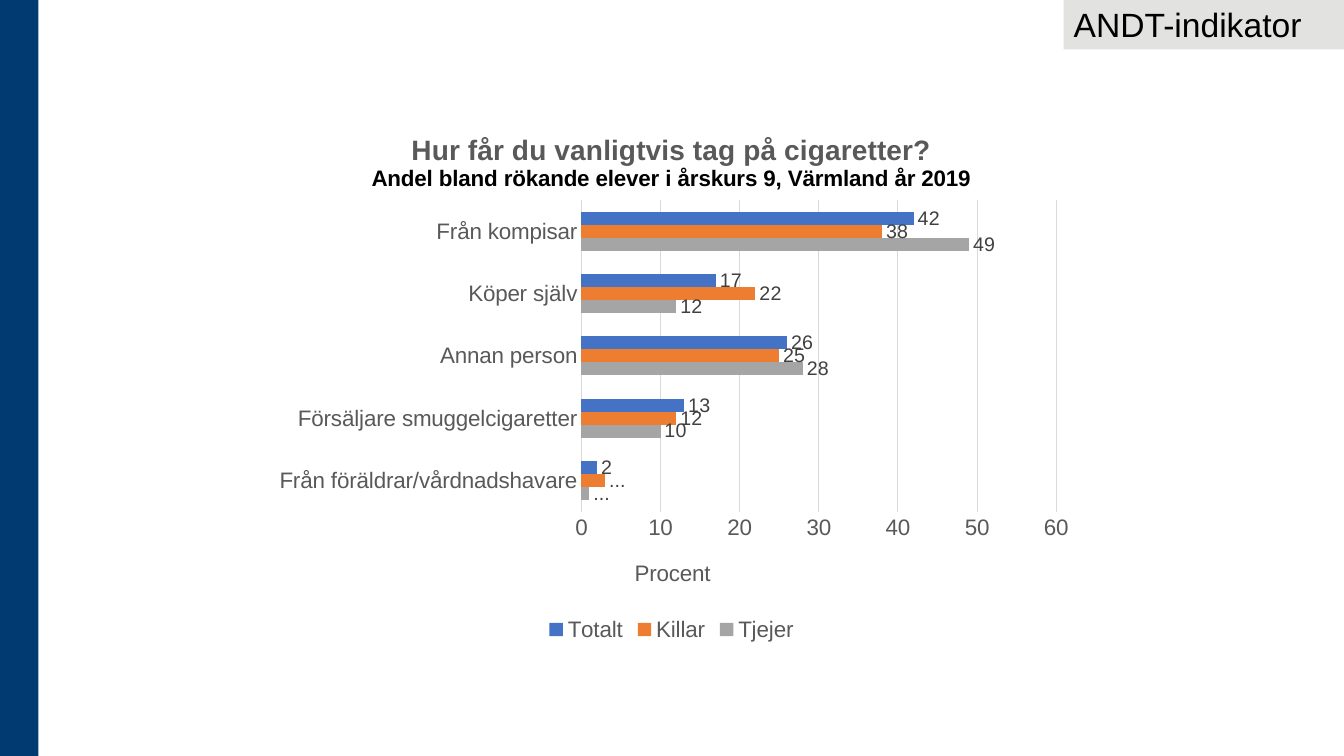
from lxml import etree
from pptx import Presentation, util as u
from pptx.chart.data import CategoryChartData
from pptx.dml.color import RGBColor
from pptx.enum import chart as ch, shapes, text
from pptx.oxml.ns import qn

COLORS = {
    "band": "003A70", "tag": "E2E2E1", "black": "000000", "axis": "595959",
    "grid": "D9D9D9", "label": "404040",
    "Tjejer": "A5A5A5", "Killar": "ED7D31", "Totalt": "4472C4",
}
FONT = "Arial"
WIDTH, HEIGHT = u.Inches(13.33), u.Inches(7.5)
SOURCES = ["Från föräldrar/vårdnadshavare", "Försäljare smuggelcigaretter",
           "Annan person", "Köper själv", "Från kompisar"]
SHARES = {"Tjejer": [1, 10, 28, 12, 49], "Killar": [3, 12, 25, 22, 38],
          "Totalt": [2, 13, 26, 17, 42]}
MASKED = ("Tjejer", "Killar")


def rgb(name):
    """Return the named palette colour."""
    return RGBColor.from_string(COLORS[name])


def style(font, size, color, bold=False):
    """Set face, size, colour and weight of a font."""
    font.name, font.size, font.bold = FONT, u.Pt(size), bold
    font.color.rgb = rgb(color)


def add_run(paragraph, words, *look):
    """Append one styled run to a paragraph."""
    run = paragraph.add_run()
    run.text = words
    style(run.font, *look)


def place(parent, index, **shares):
    """Fix the layout of a chart part, given as shares of the chart."""
    for old in parent.findall(qn("c:layout")):
        parent.remove(old)
    layout = etree.Element(qn("c:layout"))
    manual = etree.SubElement(layout, qn("c:manualLayout"))
    if "w" in shares:
        etree.SubElement(manual, qn("c:layoutTarget")).set("val", "inner")
    for side in ("x", "y"):
        etree.SubElement(manual, qn(f"c:{side}Mode")).set("val", "edge")
    for key, share in shares.items():
        etree.SubElement(manual, qn(f"c:{key}")).set("val", str(share))
    parent.insert(index, layout)


def add_block(slide, box, color):
    """Draw a plain filled rectangle in the box."""
    block = slide.shapes.add_shape(shapes.MSO_SHAPE.RECTANGLE, *box)
    block.shadow.inherit = False
    block.fill.solid()
    block.fill.fore_color.rgb = rgb(color)
    block.line.fill.background()
    return block


def add_tag(slide, box):
    """Draw the indicator tag in the corner."""
    frame = add_block(slide, box, "tag").text_frame
    frame.word_wrap = True
    frame.vertical_anchor = text.MSO_ANCHOR.TOP
    frame.paragraphs[0].alignment = text.PP_ALIGN.LEFT
    add_run(frame.paragraphs[0], "ANDT-indikator", 24, "black")


def format_axes(chart):
    """Style both axes and name the value axis."""
    sources, percent = chart.category_axis, chart.value_axis
    for axis in (sources, percent):
        axis.major_tick_mark = axis.minor_tick_mark = ch.XL_TICK_MARK.NONE
        style(axis.tick_labels.font, 16, "axis")
    percent.minimum_scale, percent.maximum_scale, percent.major_unit = 0, 60, 10
    percent.tick_labels.number_format = "0"
    percent.tick_labels.number_format_is_linked = False
    percent.format.line.fill.background()
    percent.has_major_gridlines = True
    for line in (sources.format.line, percent.major_gridlines.format.line):
        line.color.rgb, line.width = rgb("grid"), u.Pt(0.75)
    unit = percent.axis_title
    add_run(unit.text_frame.paragraphs[0], "Procent", 16, "axis")
    unit._element.find(".//" + qn("a:bodyPr")).set("rot", "0")
    place(unit._element, 1, x=0.45, y=0.83)


def format_bars(plot):
    """Colour and label the bars, masking the smallest groups."""
    plot.gap_width, plot.overlap, plot.vary_by_categories = 182, 0, False
    for series in plot.series:
        series.format.fill.solid()
        series.format.fill.fore_color.rgb = rgb(series.name)
        labels = series.data_labels
        labels.show_value = True
        labels.number_format, labels.number_format_is_linked = "0", False
        labels.position = ch.XL_LABEL_POSITION.OUTSIDE_END
        style(labels.font, 14, "label")
        if series.name in MASKED:
            mask = series.points[0].data_label
            add_run(mask.text_frame.paragraphs[0], "...", 14, "label")
            mask.position = ch.XL_LABEL_POSITION.OUTSIDE_END


def add_source_chart(slide, box):
    """Draw the bar chart of where cigarettes come from."""
    data = CategoryChartData(number_format="0")
    data.categories = SOURCES
    for group, values in SHARES.items():
        data.add_series(group, values)
    chart = slide.shapes.add_chart(ch.XL_CHART_TYPE.BAR_CLUSTERED, *box, data).chart
    style(chart.font, 16, "black")
    chart.has_title = True
    heading = chart.chart_title.text_frame
    add_run(heading.paragraphs[0], "Hur får du vanligtvis tag på cigaretter?", 20, "axis", True)
    add_run(heading.add_paragraph(),
            "Andel bland rökande elever i årskurs 9, Värmland år 2019", 16, "black", True)
    place(chart.chart_title._element, 1, x=0.13, y=0.04)
    format_axes(chart)
    format_bars(chart.plots[0])
    place(chart._chartSpace.find(".//" + qn("c:plotArea")), 0, x=0.39, y=0.17, w=0.58, h=0.58)
    chart.has_legend = True
    chart.legend.position = ch.XL_LEGEND_POSITION.BOTTOM
    chart.legend.include_in_layout = False
    style(chart.legend.font, 16, "axis")


def build_slide(deck):
    """Lay out the band, tag and chart on a blank slide."""
    slide = deck.slides.add_slide(deck.slide_layouts[6])
    add_block(slide, (0, 0, u.Inches(0.38), HEIGHT), "band")
    tag_width = u.Inches(2.78)
    add_tag(slide, (WIDTH - tag_width, u.Inches(-0.01), tag_width, u.Inches(0.5)))
    add_source_chart(slide, [u.Inches(side) for side in (2.6, 1.08, 8.12, 5.33)])


def main():
    """Build and save the deck."""
    deck = Presentation()
    deck.slide_width, deck.slide_height = WIDTH, HEIGHT
    build_slide(deck)
    deck.save("out.pptx")


if __name__ == "__main__":
    main()
